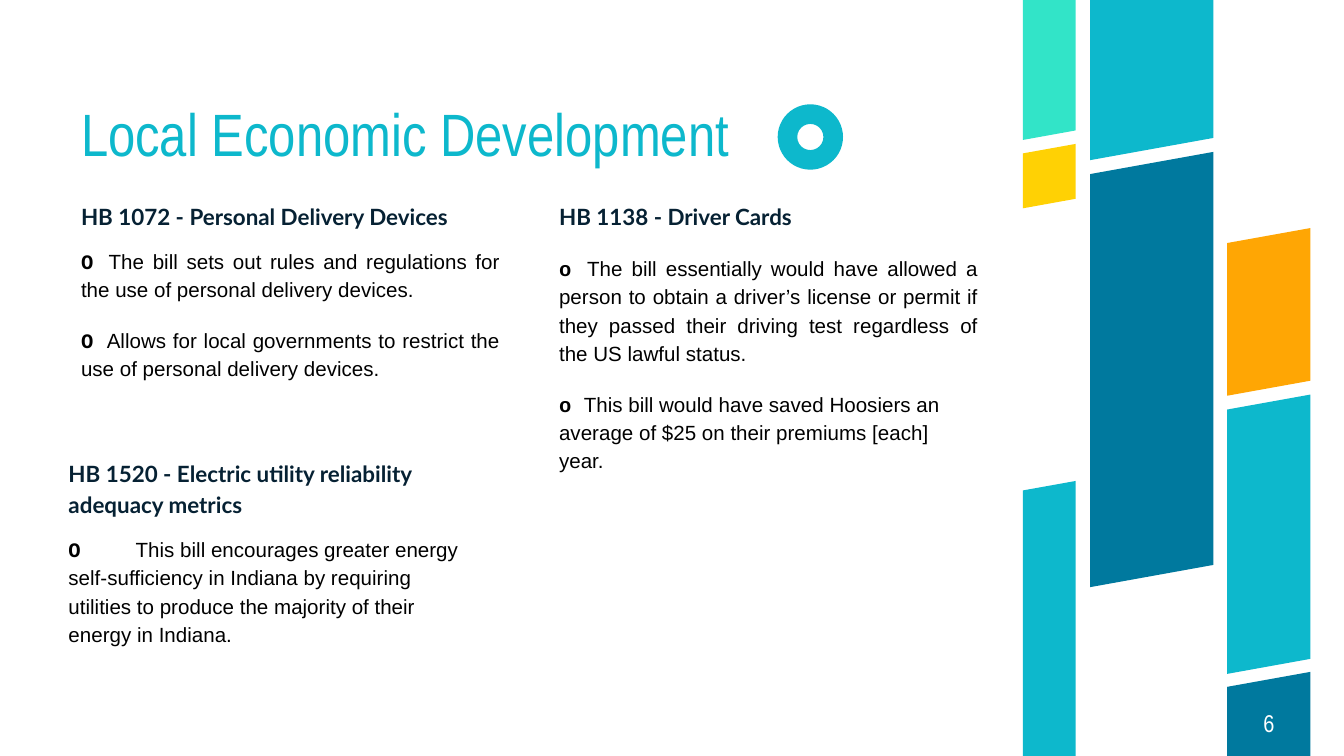
from pptx import Presentation
from pptx.dml.color import RGBColor
from pptx.enum.shapes import MSO_SHAPE
from pptx.enum.text import MSO_ANCHOR, MSO_AUTO_SIZE, PP_ALIGN
from pptx.oxml.ns import qn
from pptx.util import Pt
from lxml import etree

LEFT, JUST, MID = PP_ALIGN.LEFT, PP_ALIGN.JUSTIFY, PP_ALIGN.CENTER
TOP, CENTER, BOTTOM = MSO_ANCHOR.TOP, MSO_ANCHOR.MIDDLE, MSO_ANCHOR.BOTTOM
WIDE, HIGH = 720, 405
SLOPE = 0.18  # rise of the slanted bar ends per unit of width
HEX = {"teal": "0DB8CC", "blue": "00799E", "mint": "32E4C8", "gold": "FFD104",
       "orange": "FFA604", "navy": "062133", "black": "000000", "white": "FFFFFF"}

# Content: heading, then (marker, text, alignment, space before, space after)
TITLE = "Local Economic Development"
DEVICES = ("HB 1072 - Personal Delivery Devices", [
    ("O ", "The bill sets out rules and regulations for the use of personal "
     "delivery devices.", JUST, 8, 0),
    ("O ", "Allows for local governments to restrict the use of personal "
     "delivery devices.", JUST, 12, 12)])
CARDS = ("HB 1138 - Driver Cards", [
    ("o ", "The bill essentially would have allowed a person to obtain a "
     "driver’s license or permit if they passed their driving test regardless "
     "of the US lawful status.", JUST, 12, 0),
    ("o ", "This bill would have saved Hoosiers an average of $25 on their "
     "premiums [each] year.", LEFT, 12, 0)])
POWER = ("HB 1520 - Electric utility reliability adequacy metrics", [
    ("O\t", "This bill encourages greater energy self-sufficiency in Indiana by "
     "requiring utilities to produce the majority of their energy in Indiana.",
     LEFT, 8, 8)])
PAGE = "6"

# Bar columns: left, width, then (top, bottom, colour) along the left edge
BARS = [
    (548, 28.3, [(262.8, HIGH, "teal"), (82.2, 111.6, "gold"), (0, 75, "mint")]),
    (584, 66, [(93.3, 314.6, "blue"), (0, 85.8, "teal")]),
    (657.4, 44.6, [(130.2, 212, "orange"), (368, HIGH, "blue"),
                   (219.4, 361, "teal")]),
]


def paint(shape, hue):
    shape.fill.solid()
    shape.fill.fore_color.rgb = RGBColor.from_string(HEX[hue])
    shape.line.fill.background()
    shape.shadow.inherit = False


def add_bar(x, w, top, low, hue):
    def right(y):
        return y if y in (0, HIGH) else y - SLOPE * w

    form = slide.shapes.build_freeform(Pt(x), Pt(top))
    form.add_line_segments([(Pt(x + w), Pt(right(top))),
                            (Pt(x + w), Pt(right(low))), (Pt(x), Pt(low))])
    paint(form.convert_to_shape(), hue)


def set_frame(shape, box, anchor, inset=0):
    shape.left, shape.top, shape.width, shape.height = map(Pt, box)
    frame = shape.text_frame
    frame.word_wrap = True
    frame.auto_size = MSO_AUTO_SIZE.NONE
    frame.vertical_anchor = anchor
    frame.margin_left = frame.margin_right = Pt(inset)
    frame.margin_top = frame.margin_bottom = Pt(inset)
    return frame


def set_para(para, align, space, before=0, after=0):
    para.alignment, para.line_spacing = align, space
    para.space_before, para.space_after = Pt(before), Pt(after)


def add_run(para, text, size, face, hue, bold=False):
    run = para.add_run()
    run.text = text
    font = run.font
    font.size, font.name, font.bold = Pt(size), face, bold
    font.color.rgb = RGBColor.from_string(HEX[hue])


def no_bullet(para):
    props = para._p.get_or_add_pPr()
    props.set("marL", "0")
    props.set("indent", "0")
    etree.SubElement(props, qn("a:buNone"))
    return props


def add_bill(frame, bill):
    head, items = bill
    para = frame.paragraphs[0]
    set_para(para, LEFT, 1.15)
    no_bullet(para)
    add_run(para, head, 12, "Lato", "navy", True)
    for mark, text, align, before, after in items:
        para = frame.add_paragraph()
        set_para(para, align, 1.15, before, after)
        props = no_bullet(para)
        if "\t" in mark:
            tabs = etree.SubElement(props, qn("a:tabLst"))
            etree.SubElement(tabs, qn("a:tab"), pos=str(Pt(20)), algn="l")
        add_run(para, mark, 11, "Courier New", "black", True)
        add_run(para, text, 11, "Arial", "black")


deck = Presentation()
deck.slide_width, deck.slide_height = Pt(WIDE), Pt(HIGH)
slide = deck.slides.add_slide(deck.slide_layouts[3])
title, first, second = slide.placeholders

# Slanted bars
for x, w, parts in BARS:
    for top, low, hue in parts:
        add_bar(x, w, top, low, hue)

# Title
para = set_frame(title, (43.4, 60, 481, 31), BOTTOM).paragraphs[0]
set_para(para, LEFT, 0.9)
add_run(para, TITLE, 32, "Arial Narrow", "teal")

# Bills
add_bill(set_frame(first, (43.4, 106.6, 224.6, 180), TOP), DEVICES)
add_bill(set_frame(second, (299.5, 106.6, 224.6, 180), TOP), CARDS)
note = slide.shapes.add_textbox(0, 0, 0, 0)
add_bill(set_frame(note, (29.6, 237.4, 224.6, 115), TOP, 7.2), POWER)

# Page number
label = slide.shapes.add_textbox(0, 0, 0, 0)
para = set_frame(label, (657.4, 369.4, 44.6, 35.6), CENTER).paragraphs[0]
set_para(para, MID, 1.0)
add_run(para, PAGE, 13, "Arial Narrow", "white")

# Ring beside the title
ring = slide.shapes.add_shape(MSO_SHAPE.DONUT, Pt(416.6), Pt(55.9), Pt(35), Pt(35))
ring.adjustments[0] = 0.3
paint(ring, "teal")

deck.save("out.pptx")
